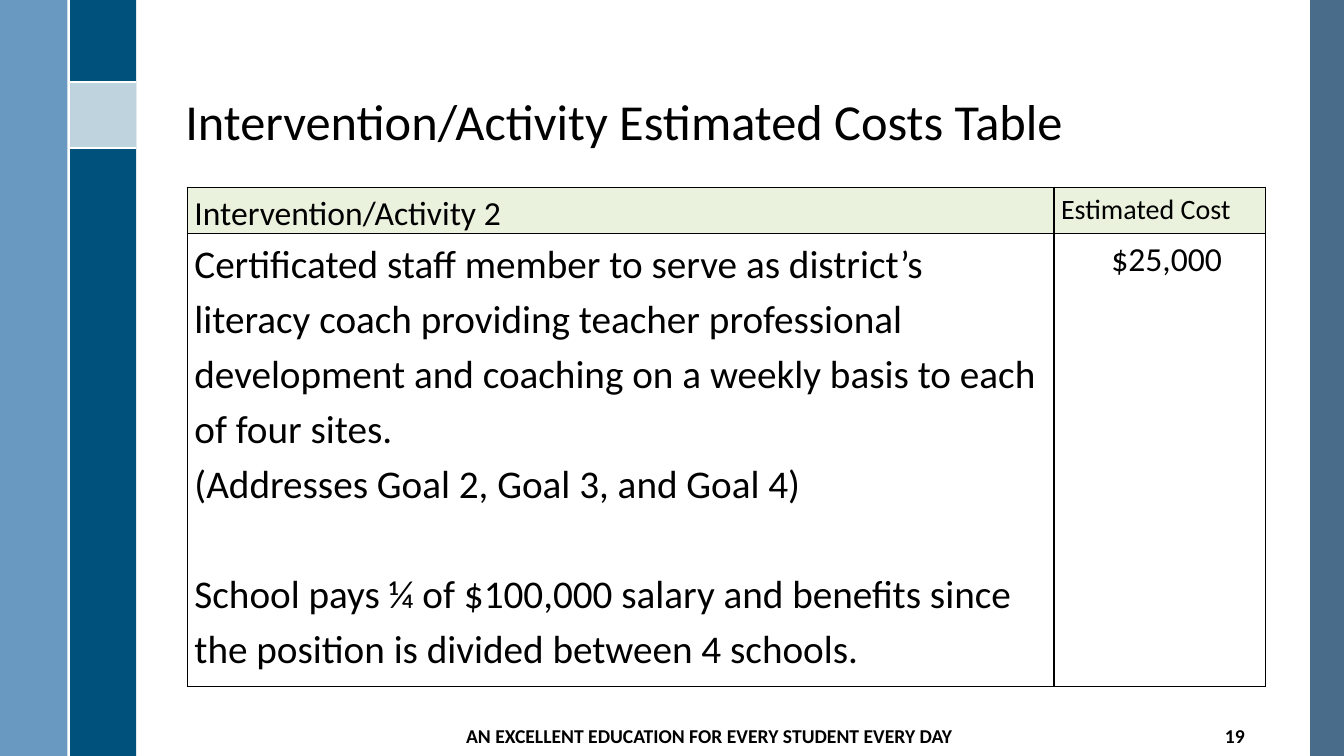
from lxml import etree
from pptx import Presentation, util as u
from pptx.dml.color import RGBColor
from pptx.enum import shapes, text
from pptx.oxml.ns import qn

COLORS = {"ink": "000000", "white": "FFFFFF", "navy": "00517C", "slate": "355D7E",
          "sky": "558BB8", "header": "EAF1DD"}
FONT = "Calibri"
WIDTH, HEIGHT = 33.87, 19.05  # all lengths in cm
BAND_LEFT, BAND_WIDTH = 1.73, 1.7
SQUARE_TOP, SQUARE_BOTTOM = 2.06, 3.73

# left, top, width, height, colour, opacity in percent
PANELS = [
    (33.02, 0, 0.85, HEIGHT, "slate", 90),
    (BAND_LEFT, 0, BAND_WIDTH, HEIGHT, "navy", 100),
    (0, 0, 1.7, HEIGHT, "sky", 88),
    (BAND_LEFT, SQUARE_TOP, BAND_WIDTH, SQUARE_BOTTOM - SQUARE_TOP, "white", 75),
]
BAND_RIGHT = BAND_LEFT + BAND_WIDTH
RULES = [
    (BAND_LEFT, SQUARE_TOP, BAND_RIGHT, SQUARE_TOP),
    (BAND_LEFT, SQUARE_BOTTOM, BAND_RIGHT, SQUARE_BOTTOM),
    (BAND_LEFT, 0, BAND_LEFT, HEIGHT),
]

LEFT, CENTER, RIGHT = text.PP_ALIGN.LEFT, text.PP_ALIGN.CENTER, text.PP_ALIGN.RIGHT
TITLE = "Intervention/Activity Estimated Costs Table"
FOOTER = "AN EXCELLENT EDUCATION FOR EVERY STUDENT EVERY DAY"
PAGE_NUMBER = "19"

TABLE_AT = (4.72, 4.72)
COLUMNS = [21.84, 5.33]
ROWS = [1.14, 11.4]
# each cell: paragraphs, size, left indent
CELLS = [
    [(["Intervention/Activity 2"], 24, 0), (["Estimated Cost"], 20, 0)],
    [([
        "Certificated staff member to serve as district’s literacy coach providing teacher "
        "professional development and coaching on a weekly basis to each of four sites.",
        "(Addresses Goal 2, Goal 3, and Goal 4)",
        "School pays ¼ of $100,000 salary and benefits since the position is divided "
        "between 4 schools.",
    ], 28, 0), (["$25,000"], 24, 1.27)],
]
SPACE_BEFORE_LAST = 39  # points, one line of the cell text


def cm(*lengths):
    return [u.Cm(length) for length in lengths]


def rgb(name):
    return RGBColor.from_string(COLORS[name])


def set_font(para, size, bold=False):
    para.font.name = FONT
    para.font.size = u.Pt(size)
    para.font.bold = bold
    para.font.color.rgb = rgb("ink")


def add_panel(page, left, top, width, height, color, opacity):
    panel = page.shapes.add_shape(shapes.MSO_SHAPE.RECTANGLE, *cm(left, top, width, height))
    panel.shadow.inherit = False
    panel.line.fill.background()
    panel.fill.solid()
    panel.fill.fore_color.rgb = rgb(color)
    if opacity < 100:
        value = next(panel._element.spPr.iter(qn("a:srgbClr")))
        etree.SubElement(value, qn("a:alpha"), val=str(opacity * 1000))


def add_rule(page, ends):
    rule = page.shapes.add_connector(shapes.MSO_CONNECTOR.STRAIGHT, *cm(*ends))
    rule.line.color.rgb = rgb("white")
    rule.line.width = u.Pt(1.5)
    etree.SubElement(rule._element.spPr, qn("a:effectLst"))


def add_text(page, at, words, size, align, anchor, bold=False):
    box = page.shapes.add_textbox(*cm(*at))
    frame = box.text_frame
    frame.word_wrap = True
    frame.vertical_anchor = anchor
    para = frame.paragraphs[0]
    para.text = words
    para.alignment = align
    set_font(para, size, bold)
    return para


def add_borders(cell):
    properties = cell._tc.get_or_add_tcPr()
    for side in ("lnL", "lnR", "lnT", "lnB"):
        border = etree.SubElement(properties, qn("a:" + side), w=str(u.Pt(1)))
        fill = etree.SubElement(border, qn("a:solidFill"))
        etree.SubElement(fill, qn("a:srgbClr"), val=COLORS["ink"])


def fill_cell(cell, words, size, indent, is_header):
    cell.margin_left = cell.margin_right = u.Cm(0.18)
    cell.margin_top = cell.margin_bottom = 0
    add_borders(cell)
    if is_header:
        cell.fill.solid()
        cell.fill.fore_color.rgb = rgb("header")
    else:
        cell.fill.background()
    cell.text = "\n".join(words)
    paras = cell.text_frame.paragraphs
    for para in paras:
        para.line_spacing = 1.15
        if indent:
            para._p.get_or_add_pPr().set("marL", str(u.Cm(indent)))
        set_font(para, size)
    if len(paras) > 1:
        paras[-1].space_before = u.Pt(SPACE_BEFORE_LAST)


def add_cost_table(page):
    frame = page.shapes.add_table(len(ROWS), len(COLUMNS),
                                  *cm(*TABLE_AT, sum(COLUMNS), sum(ROWS)))
    table = frame.table
    for column, width in zip(table.columns, COLUMNS):
        column.width = u.Cm(width)
    for r, height in enumerate(ROWS):
        table.rows[r].height = u.Cm(height)
        for c, content in enumerate(CELLS[r]):
            fill_cell(table.cell(r, c), *content, is_header=r == 0)


def main():
    deck = Presentation()
    deck.slide_width, deck.slide_height = cm(WIDTH, HEIGHT)
    page = deck.slides.add_slide(deck.slide_layouts[6])
    for panel in PANELS:
        add_panel(page, *panel)
    for ends in RULES:
        add_rule(page, ends)
    middle = text.MSO_ANCHOR.MIDDLE
    title = add_text(page, (4.42, 0.48, 27.18, 3.45), TITLE, 36, LEFT, text.MSO_ANCHOR.BOTTOM)
    title.line_spacing = 0.9
    add_text(page, (11.43, 18.03, 12.9, 1.02), FOOTER, 14, CENTER, middle, bold=True)
    add_text(page, (29.92, 18.03, 1.7, 1.02), PAGE_NUMBER, 14, RIGHT, middle, bold=True)
    add_cost_table(page)
    deck.save("out.pptx")


if __name__ == "__main__":
    main()
